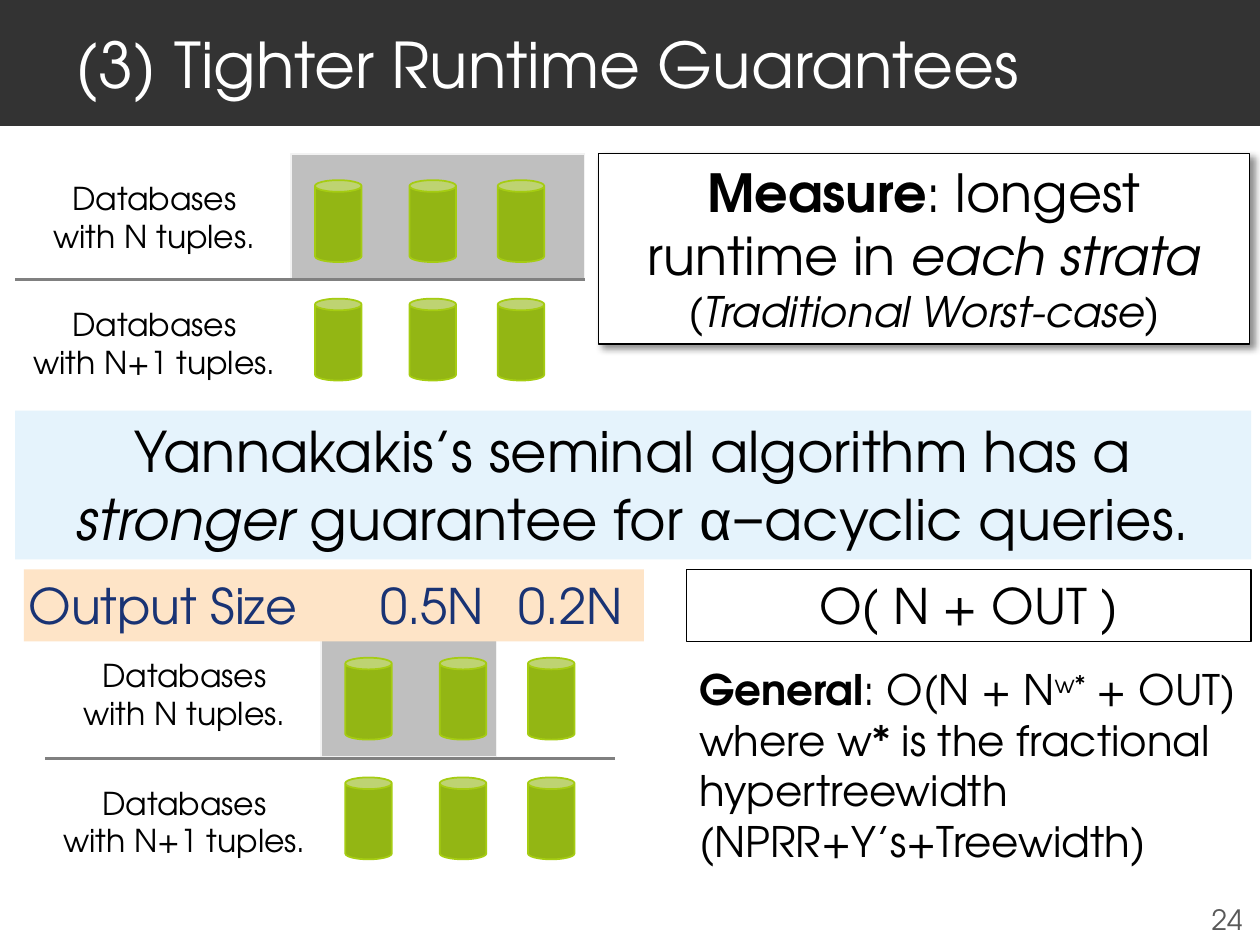
import pptx
import pptx.dml.color
import pptx.enum.shapes
import pptx.enum.text
import pptx.oxml
import pptx.oxml.ns
import pptx.util
import lxml.etree

Inches, Pt = pptx.util.Inches, pptx.util.Pt
rgb = pptx.dml.color.RGBColor.from_string
SHAPE = pptx.enum.shapes.MSO_SHAPE
ALIGN = pptx.enum.text.PP_ALIGN
ANCHOR = pptx.enum.text.MSO_ANCHOR
FONT = "TeX Gyre Adventor"

prs = pptx.Presentation()
prs.slide_width, prs.slide_height = Inches(10), Inches(7.5)
slide = prs.slides.add_slide(prs.slide_layouts[6])


def box(x, y, w, h, fill=None, line=None, width=1, kind=SHAPE.RECTANGLE):
    s = slide.shapes.add_shape(kind, Inches(x), Inches(y), Inches(w), Inches(h))
    s.shadow.inherit = False
    if fill:
        s.fill.solid()
        s.fill.fore_color.rgb = rgb(fill)
    else:
        s.fill.background()
    if line:
        s.line.color.rgb = rgb(line)
        s.line.width = Pt(width)
    else:
        s.line.fill.background()
    return s


def write(s, paragraphs, color="000000", align=ALIGN.CENTER, anchor=ANCHOR.TOP):
    tf = s.text_frame
    tf.word_wrap = True
    tf.vertical_anchor = anchor
    for i, (size, runs) in enumerate(paragraphs):
        p = tf.add_paragraph() if i else tf.paragraphs[0]
        p.alignment = align
        for text, style in runs:
            r = p.add_run()
            r.text = text
            r.font.name = "Arial" if style == "greek" else FONT
            r.font.size = Pt(size)
            r.font.bold = style == "bold"
            r.font.italic = style == "italic"
            r.font.color.rgb = rgb(color)
            if style == "super":
                r.font._element.set("baseline", "30000")


s = box(0, 0, 10, 1, "333333")
s.text_frame.margin_left, s.text_frame.margin_right = Inches(0.6), Inches(0.3)
write(s, [(36, [("(3) Tighter Runtime Guarantees", "")])], "FFFFFF",
      ALIGN.LEFT, ANCHOR.MIDDLE)

box(2.31, 1.22, 2.33, 1, "BFBFBF", "F2F2F2")
box(2.55, 5.01, 1.39, 1, "BFBFBF", "F2F2F2")
box(0.19, 4.52, 4.92, 0.57, "FEE4C7")

strata = [
    (2.5, (1.43, 2.37), -0.05, (1.37, 2.37), 0.12, 2.22),
    (2.74, (5.22, 6.17), 0.19, (5.16, 6.17), 0.36, 6.02),
]
for can_x, can_ys, label_x, label_ys, line_x, line_y in strata:
    for can_y in can_ys:
        for dx in (0, 0.75, 1.45):
            box(can_x + dx, can_y, 0.37, 0.65, "93B614", "A5CC12", kind=SHAPE.CAN)
    for label_y, count in zip(label_ys, ("N", "N+1")):
        s = slide.shapes.add_textbox(Inches(label_x), Inches(label_y), Inches(2.55), Inches(0.71))
        write(s, [(18, [("Databases", "")]), (18, [(f"with {count} tuples.", "")])])
    s = slide.shapes.add_connector(
        pptx.enum.shapes.MSO_CONNECTOR.STRAIGHT,
        Inches(line_x), Inches(line_y), Inches(line_x + 4.52), Inches(line_y))
    s.line.color.rgb = rgb("808080")
    s.line.width = Pt(2)
    lxml.etree.SubElement(s._element.spPr, pptx.oxml.ns.qn("a:effectLst"))

s = box(4.75, 1.22, 5.17, 1.51, "FFFFFF", "000000", 0.75)
s._element.spPr.find(pptx.oxml.ns.qn("a:effectLst")).append(pptx.oxml.parse_xml(
    f'<a:outerShdw {pptx.oxml.ns.nsdecls("a")} blurRad="50800" dist="38100" dir="2700000">'
    '<a:srgbClr val="000000"><a:alpha val="43000"/></a:srgbClr></a:outerShdw>'))
write(s, [
    (30, [("Measure", "bold"), (": longest runtime in ", ""), ("each strata", "italic")]),
    (24, [("(", ""), ("Traditional Worst-case", "italic"), (")", "")]),
])

s = box(0.12, 3.26, 9.81, 1.18, "E5F3FC")
write(s, [(32, [("Yannakakis’s seminal algorithm has a ", ""), ("stronger", "italic"),
                (" guarantee for ", ""), ("α−", "greek"), ("acyclic queries.", "")])])

s = box(5.45, 4.52, 4.48, 0.57, None, "000000", 0.75)
write(s, [(28, [("O( N + OUT )", "")])])

s = slide.shapes.add_textbox(Inches(5.45), Inches(5.22), Inches(4.54), Inches(1.72))
write(s, [
    (24, [("General", "bold"), (": O(N + N", ""), ("w*", "super"),
          (" + OUT) where w* is the fractional hypertreewidth", "")]),
    (24, [("(NPRR+Y’s+Treewidth)", "")]),
], align=ALIGN.LEFT)

for x, w, text, align in [
    (0.13, 2.5, "Output Size", ALIGN.LEFT),
    (2.55, 1.76, "0.5N", ALIGN.CENTER),
    (3.96, 1.14, "0.2N", ALIGN.CENTER),
]:
    s = slide.shapes.add_textbox(Inches(x), Inches(4.52), Inches(w), Inches(0.57))
    write(s, [(28, [(text, "")])], "193374", align)

s = slide.shapes.add_textbox(Inches(9.49), Inches(7.1), Inches(0.5), Inches(0.4))
write(s, [(16, [("24", "")])], "595959", anchor=ANCHOR.MIDDLE)

prs.save("out.pptx")
